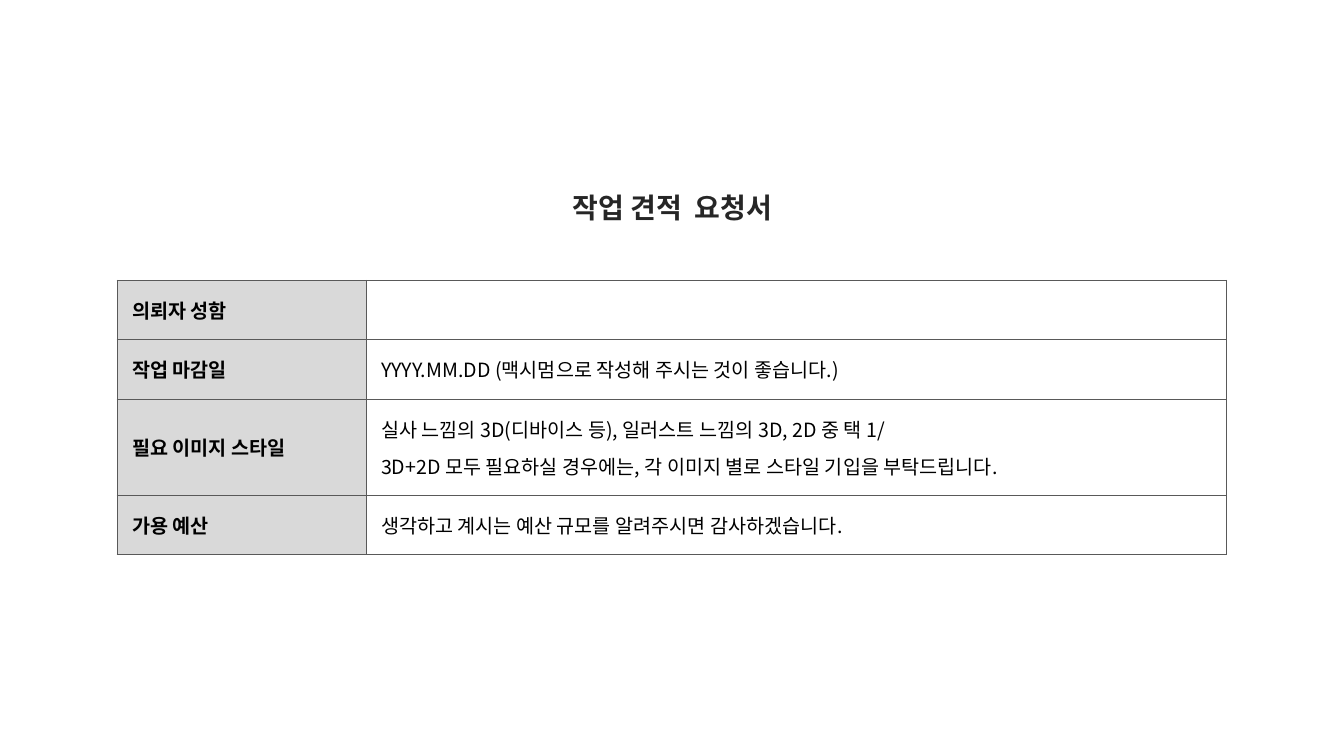
import pptx
import pptx.dml.color
import pptx.enum.text
import pptx.oxml
import pptx.oxml.ns
import pptx.util
from pptx.util import Inches

BLACK = pptx.dml.color.RGBColor(0x00, 0x00, 0x00)
CHARCOAL = pptx.dml.color.RGBColor(0x26, 0x26, 0x26)
BORDER = pptx.dml.color.RGBColor(0x59, 0x59, 0x59)
LABEL_FILL = pptx.dml.color.RGBColor(0xD9, 0xD9, 0xD9)
WHITE = pptx.dml.color.RGBColor(0xFF, 0xFF, 0xFF)

KOREAN_FONT = "Noto Sans CJK KR"
TITLE_FONT = {"name": "Calibri", "size": pptx.util.Pt(20), "bold": True}
LABEL_FONT = {"name": "Arial", "size": pptx.util.Pt(14), "bold": True}
ANSWER_FONT = {"name": KOREAN_FONT, "size": pptx.util.Pt(14), "bold": False}
TITLE_PARAGRAPH = {
    "alignment": pptx.enum.text.PP_ALIGN.CENTER,
    "line_spacing": 0.9,
}
ANSWER_PARAGRAPH = {"space_before": pptx.util.Pt(6)}
CELL_FORMAT = {
    "vertical_anchor": pptx.enum.text.MSO_ANCHOR.MIDDLE,
    **{f"margin_{side}": Inches(0.15) for side in ("left", "right", "top", "bottom")},
}

COLUMN_WIDTHS = (2.47, 8.53)
REQUEST_ROWS = (
    (0.59, "의뢰자 성함", [""]),
    (0.59, "작업 마감일", ["YYYY.MM.DD (맥시멈으로 작성해 주시는 것이 좋습니다.)"]),
    (0.95, "필요 이미지 스타일", [
        "실사 느낌의 3D(디바이스 등), 일러스트 느낌의 3D, 2D 중 택 1/",
        "3D+2D 모두 필요하실 경우에는, 각 이미지 별로 스타일 기입을 부탁드립니다.",
    ]),
    (0.59, "가용 예산", ["생각하고 계시는 예산 규모를 알려주시면 감사하겠습니다."]),
)


def apply_format(target, values):
    """Set every attribute in values on target."""
    for attribute, value in values.items():
        setattr(target, attribute, value)


def write_lines(frame, lines, font, color, paragraph_format):
    """Write one formatted paragraph per line."""
    for index, line in enumerate(lines):
        paragraph = frame.add_paragraph() if index else frame.paragraphs[0]
        apply_format(paragraph, paragraph_format)
        run = paragraph.add_run()
        run.text = line
        apply_format(run.font, font)
        run.font.color.rgb = color
        east_asian = pptx.oxml.parse_xml(
            f'<a:ea {pptx.oxml.ns.nsdecls("a")} typeface="{KOREAN_FONT}"/>'
        )
        run.font._element.append(east_asian)


def add_title(slide, title):
    """Add the centred heading."""
    heading = slide.shapes.add_textbox(
        Inches(4.97), Inches(1.77), Inches(3.4), Inches(0.51)
    )
    frame = heading.text_frame
    apply_format(frame, {
        "word_wrap": True,
        "vertical_anchor": pptx.enum.text.MSO_ANCHOR.BOTTOM,
    })
    write_lines(frame, [title], TITLE_FONT, CHARCOAL, TITLE_PARAGRAPH)


def outline_cell(cell):
    """Draw a thin border on all four sides of a cell."""
    properties = cell._tc.get_or_add_tcPr()
    for position, side in enumerate(("lnL", "lnR", "lnT", "lnB")):
        properties.insert(position, pptx.oxml.parse_xml(
            f'<a:{side} {pptx.oxml.ns.nsdecls("a")} w="{pptx.util.Pt(0.5)}">'
            f'<a:solidFill><a:srgbClr val="{BORDER}"/></a:solidFill></a:{side}>'
        ))


def fill_cell(cell, lines, font, fill, paragraph_format):
    """Write and style one table cell."""
    apply_format(cell, CELL_FORMAT)
    cell.fill.solid()
    cell.fill.fore_color.rgb = fill
    write_lines(cell.text_frame, lines, font, BLACK, paragraph_format)
    outline_cell(cell)


def add_request_table(slide):
    """Add the form of labels and answers."""
    height = sum(row_height for row_height, _, _ in REQUEST_ROWS)
    form = slide.shapes.add_table(
        len(REQUEST_ROWS), len(COLUMN_WIDTHS),
        Inches(1.16), Inches(2.78), Inches(sum(COLUMN_WIDTHS)), Inches(height),
    ).table
    apply_format(form, {"first_row": False, "horz_banding": False})
    for column, width in zip(form.columns, COLUMN_WIDTHS):
        column.width = Inches(width)
    for row, (row_height, label, answer) in zip(form.rows, REQUEST_ROWS):
        row.height = Inches(row_height)
        label_cell, answer_cell = row.cells
        fill_cell(label_cell, [label], LABEL_FONT, LABEL_FILL, {})
        fill_cell(answer_cell, answer, ANSWER_FONT, WHITE, ANSWER_PARAGRAPH)


def main():
    """Build the quotation request slide."""
    deck = pptx.Presentation()
    apply_format(deck, {"slide_width": Inches(13.33), "slide_height": Inches(7.5)})
    slide = deck.slides.add_slide(deck.slide_layouts[6])
    add_request_table(slide)
    add_title(slide, "작업 견적  요청서")
    deck.save("out.pptx")


if __name__ == "__main__":
    main()
